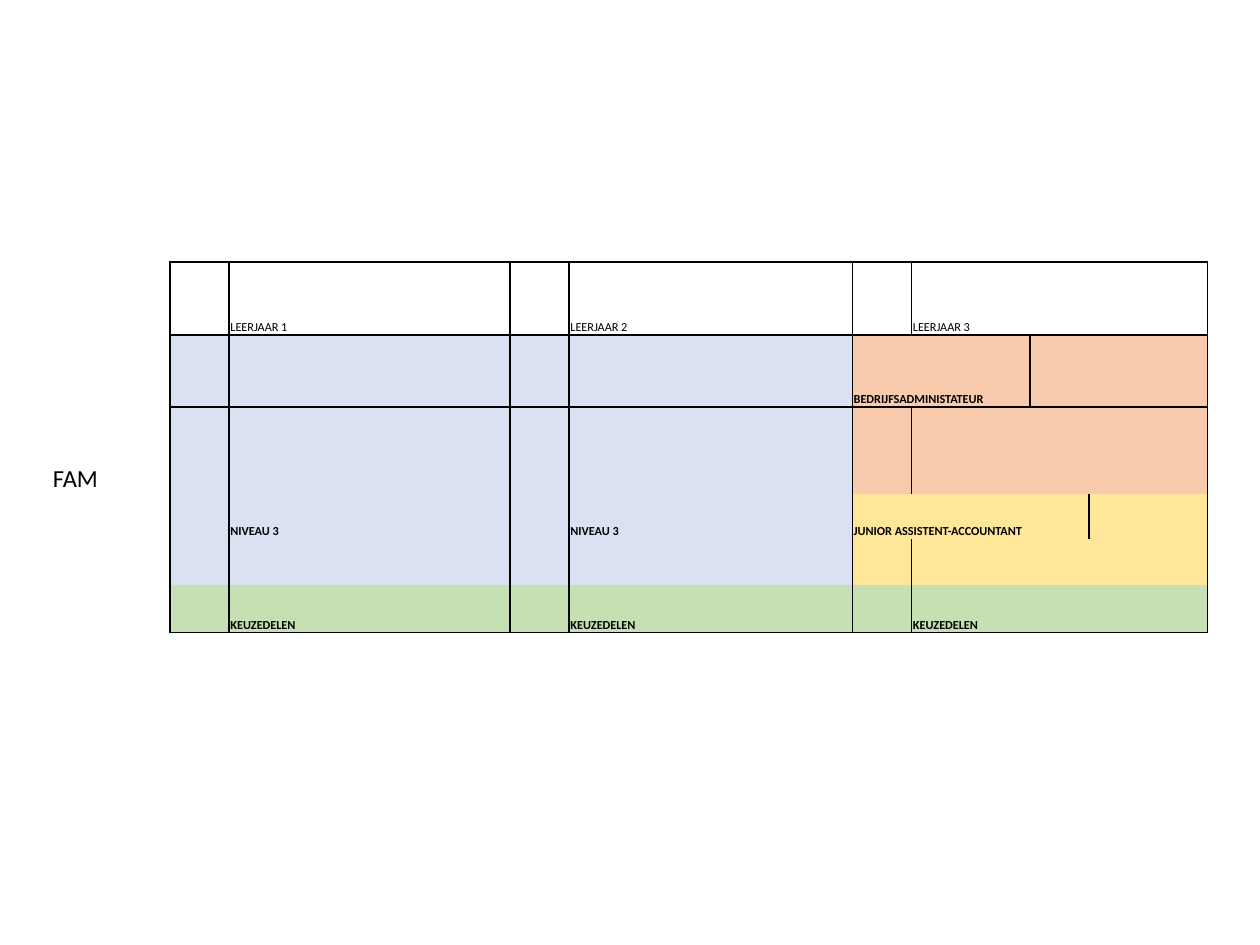
"""Build the FAM curriculum slide: three school years with their levels and electives."""
import pptx
import pptx.dml.color
import pptx.enum.text
import pptx.oxml
import pptx.oxml.ns
import pptx.util
from pptx.util import Inches

COLORS = {
    "white": "FFFFFF",
    "black": "000000",
    "blue": "D9E1F2",
    "orange": "F8CBAD",
    "yellow": "FFE699",
    "green": "C6E0B4",
}
COLUMN_WIDTHS = [0.47] * 3 + [0.23, 0.47, 0.59] + [0.47] * 3 + [0.37] + [0.47] * 10
ROW_HEIGHTS = [0.58, 0.58, 0.57, 0.69, 0.36, 0.36, 0.38]
YEAR_STARTS = [2, 8, 14]
LAST_ROW = len(ROW_HEIGHTS) - 1
LAST_COLUMN = len(COLUMN_WIDTHS) - 1
YEAR_FILLS = [
    ["white"] * 3,
    ["white"] * 3,
    ["blue", "blue", "orange"],
    ["blue", "blue", "orange"],
    ["blue", "blue", "yellow"],
    ["blue", "blue", "yellow"],
    ["green"] * 3,
]
LABELS = [
    (2, 14, 3, "BEDRIJFSADMINISTATEUR", 7, True),
    (3, 0, 1, "FAM", 14, False),
    (4, 14, 4, "JUNIOR ASSISTENT-ACCOUNTANT", 7, True),
    (4, 3, 2, "NIVEAU 3", 7, True),
    (4, 9, 2, "NIVEAU 3", 7, True),
]
for year, start in enumerate(YEAR_STARTS, 1):
    LABELS.append((1, start + 1, 2, f"LEERJAAR {year}", 7, False))
    LABELS.append((LAST_ROW, start + 1, 2, "KEUZEDELEN", 7, True))


def add_border(cell, side):
    cell._tc.get_or_add_tcPr().append(pptx.oxml.parse_xml(
        f'<a:ln{side} {pptx.oxml.ns.nsdecls("a")} w="12700"><a:solidFill>'
        f'<a:srgbClr val="{COLORS["black"]}"/></a:solidFill></a:ln{side}>'))


presentation = pptx.Presentation()
presentation.slide_width = Inches(10)
presentation.slide_height = Inches(7.5)
slide = presentation.slides.add_slide(presentation.slide_layouts[6])

curriculum = slide.shapes.add_table(
    len(ROW_HEIGHTS), len(COLUMN_WIDTHS),
    Inches(0.41), Inches(1.5), Inches(9.17), Inches(3.54)).table
curriculum.first_row = False
curriculum.horz_banding = False
style_id = curriculum._tbl.tblPr.find(pptx.oxml.ns.qn("a:tableStyleId"))
style_id.text = "{2D5ABB26-0587-4C30-8999-92F81FD0307C}"
for column, width in zip(curriculum.columns, COLUMN_WIDTHS):
    column.width = Inches(width)
for row, height in zip(curriculum.rows, ROW_HEIGHTS):
    row.height = Inches(height)

for row in range(len(ROW_HEIGHTS)):
    for column in range(len(COLUMN_WIDTHS)):
        cell = curriculum.cell(row, column)
        cell.margin_left = cell.margin_right = cell.margin_top = Inches(0.01)
        cell.margin_bottom = 0
        cell.vertical_anchor = pptx.enum.text.MSO_ANCHOR.BOTTOM
        cell.text_frame.paragraphs[0].font.size = pptx.util.Pt(7)

        in_year = column >= YEAR_STARTS[0]
        borders = {
            "L": row > 0 and column in YEAR_STARTS,
            "R": row > 0 and (column + 1 in YEAR_STARTS or column == LAST_COLUMN),
            "T": in_year and row in (1, 2),
            "B": in_year and row in (0, 1, LAST_ROW),
        }
        for side, visible in borders.items():
            if visible:
                add_border(cell, side)

        year = sum(column >= start for start in YEAR_STARTS) - 1
        fill = YEAR_FILLS[row][year] if in_year else "white"
        cell.fill.solid()
        cell.fill.fore_color.rgb = pptx.dml.color.RGBColor.from_string(COLORS[fill])

for row, column, span, label, size, bold in LABELS:
    cell = curriculum.cell(row, column)
    if span > 1:
        cell.merge(curriculum.cell(row, column + span - 1))
    cell.text_frame.text = label
    font = cell.text_frame.paragraphs[0].runs[0].font
    font.name = "Calibri"
    font.size = pptx.util.Pt(size)
    font.bold = bold
    font.color.rgb = pptx.dml.color.RGBColor.from_string(COLORS["black"])

presentation.save("out.pptx")
